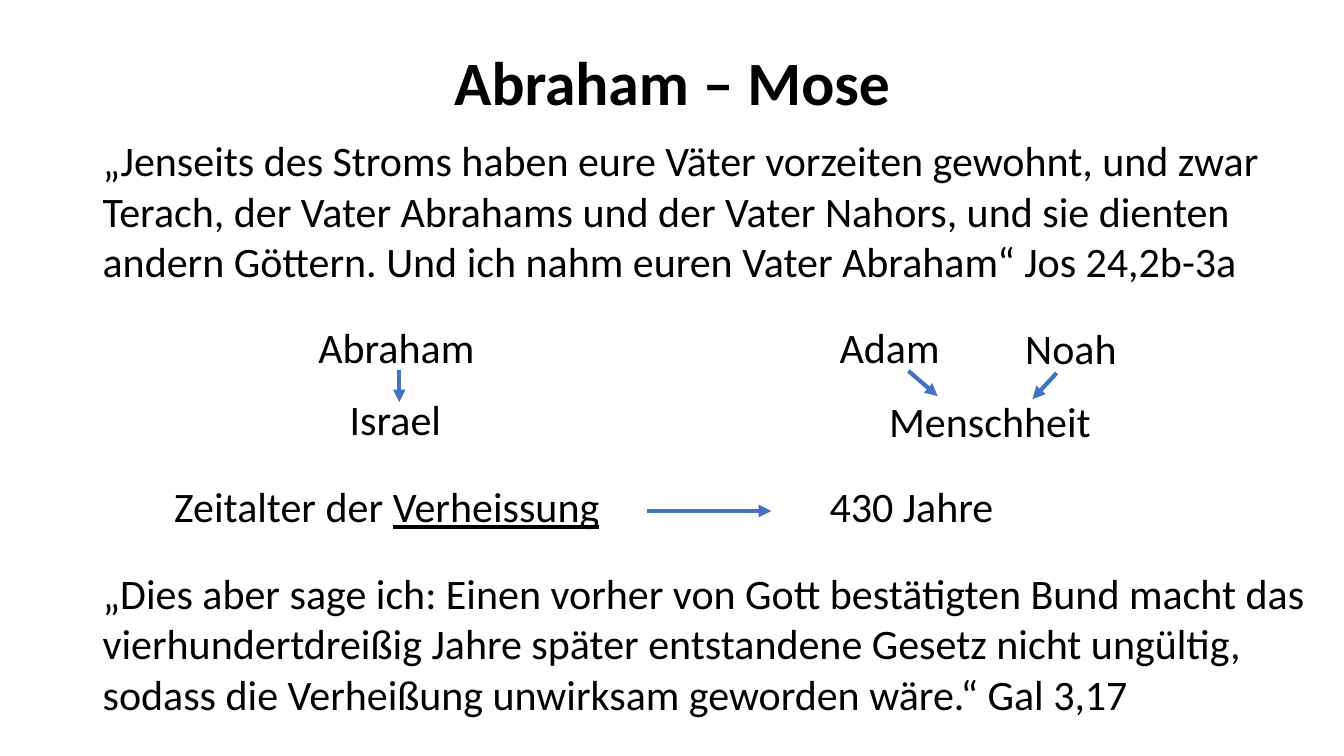
from lxml import etree
from pptx import Presentation
from pptx.dml.color import RGBColor
from pptx.enum.shapes import MSO_CONNECTOR
from pptx.enum.text import MSO_ANCHOR, MSO_AUTO_SIZE, PP_ALIGN
from pptx.oxml.ns import qn
from pptx.util import Inches, Pt

STRAIGHT = MSO_CONNECTOR.STRAIGHT
MIDDLE = MSO_ANCHOR.MIDDLE
FIT_SHAPE = MSO_AUTO_SIZE.SHAPE_TO_FIT_TEXT
CENTER = PP_ALIGN.CENTER

COLORS = {"text": "000000", "arrow": "4472C4"}
FONT = "Calibri"
LINE_HEIGHT = 0.61
QUOTE_HEIGHT = 1.62
MARGIN = 0.92

prs = Presentation()
prs.slide_width = Inches(13.33)
prs.slide_height = Inches(7.5)
slide = prs.slides.add_slide(prs.slide_layouts[6])


def add_text(parts, left, top, width, height, size=30):
    """Add a one-paragraph text box with one run per part; return its frame."""
    frame = slide.shapes.add_textbox(
        Inches(left), Inches(top), Inches(width), Inches(height)).text_frame
    frame.word_wrap = True
    frame.auto_size = FIT_SHAPE
    for part in parts:
        run = frame.paragraphs[0].add_run()
        run.text = part
        run.font.name = FONT
        run.font.size = Pt(size)
        run.font.color.rgb = RGBColor.from_string(COLORS["text"])
    return frame


# Title
title = add_text(["Abraham – Mose"], MARGIN, 0.4, 11.5, 0.89, size=44)
title.auto_size = MSO_AUTO_SIZE.NONE
title.vertical_anchor = MIDDLE
heading = title.paragraphs[0]
heading.alignment = CENTER
heading.line_spacing = 0.9
heading.runs[0].font.bold = True

# Bible quotes
quotes = [
    ("„Jenseits des Stroms haben eure Väter vorzeiten gewohnt, und zwar "
     "Terach, der Vater Abrahams und der Vater Nahors, und sie dienten "
     "andern Göttern.\u00a0Und ich nahm euren Vater Abraham“ Jos 24,2b-3a",
     1.29, 11.84),
    ("„Dies aber sage ich: Einen vorher von Gott bestätigten Bund macht das "
     "vierhundertdreißig Jahre später entstandene Gesetz nicht ungültig, "
     "sodass die Verheißung unwirksam geworden wäre.“ Gal 3,17",
     5.58, 12.33),
]
for quote, top, width in quotes:
    add_text([quote], MARGIN, top, width, QUOTE_HEIGHT)

# Ancestors and their descendants
names = [
    ("Abraham", 3.06, 3.14, 1.8),
    ("Israel", 3.37, 3.85, 1.17),
    ("Adam", 8.23, 3.14, 1.43),
    ("Noah", 10.07, 3.15, 1.19),
    ("Menschheit", 8.72, 3.87, 2.35),
]
for name, left, top, width in names:
    add_text([name], left, top, width, LINE_HEIGHT)

# Age of promise, with its duration set at a tab stop
age = add_text(["Zeitalter der ", "Verheissung", "\t430 Jahre"],
               1.63, 4.72, 10.14, LINE_HEIGHT).paragraphs[0]
age.runs[1].font.underline = True
tab_stops = etree.SubElement(age._p.get_or_add_pPr(), qn("a:tabLst"))
etree.SubElement(tab_stops, qn("a:tab"), pos=str(Inches(6.5)), algn="l")

# Arrows
arrows = [
    (3.96, 3.67, 3.96, 3.99),    # Abraham to Israel
    (9.01, 3.68, 9.3, 3.93),     # Adam to Menschheit
    (10.48, 3.7, 10.24, 3.96),   # Noah to Menschheit
    (6.42, 5.07, 7.65, 5.07),    # Verheissung to 430 Jahre
]
for ends in arrows:
    arrow = slide.shapes.add_connector(STRAIGHT, *map(Inches, ends))
    arrow.line.color.rgb = RGBColor.from_string(COLORS["arrow"])
    arrow.line.width = Pt(3)
    etree.SubElement(arrow.line._get_or_add_ln(), qn("a:tailEnd"), type="triangle")
    etree.SubElement(arrow._element.spPr, qn("a:effectLst"))

prs.save("out.pptx")
